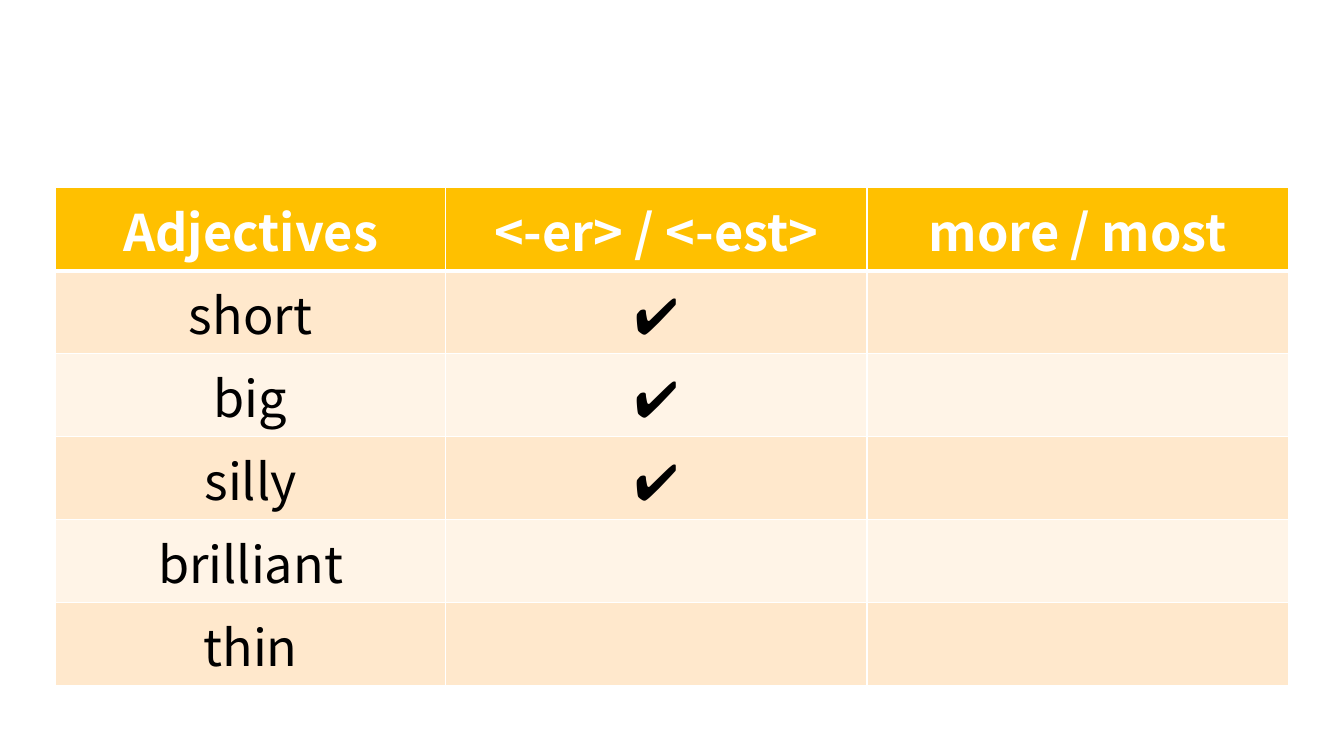
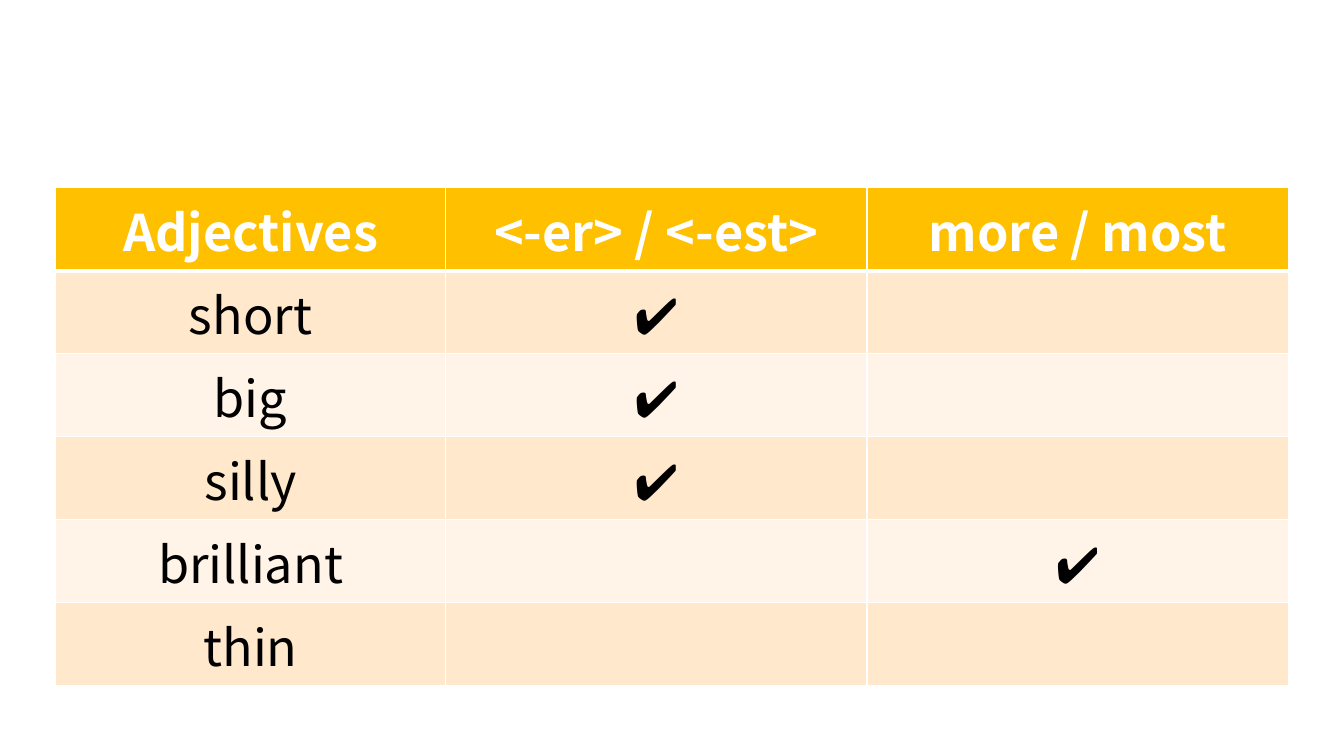
from lxml import etree
from pptx import Presentation
from pptx.dml.color import RGBColor
from pptx.enum import text
from pptx.oxml import ns
from pptx.util import Cm, Pt

FONT = "Noto Sans CJK JP"
FONT_SIZE = Pt(36)
WHITE = RGBColor(0xFF, 0xFF, 0xFF)
BLACK = RGBColor(0x00, 0x00, 0x00)
HEADER_FILL = RGBColor(0xFF, 0xC0, 0x00)
BAND_FILLS = (RGBColor(0xFF, 0xE8, 0xCC), RGBColor(0xFF, 0xF4, 0xE7))
THIN, THICK = Pt(1), Pt(3)

TABLE_LEFT, TABLE_TOP = Cm(1.4), Cm(4.73)
COLUMN_WIDTHS = (Cm(9.83), Cm(10.62), Cm(10.62))
ROW_HEIGHT = Cm(2.09)

HEADINGS = ("Adjectives", "<-er> / <-est>", "more / most")
ADJECTIVES = ("short", "big", "silly", "brilliant", "thin")
CHECK = "✔"
SUFFIX_COLUMN, MORE_COLUMN = 1, 2
FIRST_ANSWERS = {"short": SUFFIX_COLUMN, "big": SUFFIX_COLUMN, "silly": SUFFIX_COLUMN}
SLIDE_ANSWERS = (FIRST_ANSWERS, {**FIRST_ANSWERS, "brilliant": MORE_COLUMN})


def set_borders(cell, top, bottom):
    """Draw white borders; they must precede the fill in the cell properties."""
    properties = cell._tc.get_or_add_tcPr()
    for side, width in (("L", THIN), ("R", THIN), ("T", top), ("B", bottom)):
        line = etree.SubElement(properties, ns.qn(f"a:ln{side}"), w=str(width))
        fill = etree.SubElement(line, ns.qn("a:solidFill"))
        etree.SubElement(fill, ns.qn("a:srgbClr"), val=str(WHITE))


def write_cell(cell, content, color, bold):
    paragraph = cell.text_frame.paragraphs[0]
    paragraph.alignment = text.PP_ALIGN.CENTER
    if content:
        run = paragraph.add_run()
        run.text = content
        run.font.name = FONT
        run.font.size = FONT_SIZE
        run.font.bold = bold
        run.font.color.rgb = color


def answer_rows(answers):
    """Return one row per adjective, with a check in its answered column."""
    return [
        [adjective] + [CHECK if answers.get(adjective) == column else ""
                       for column in (SUFFIX_COLUMN, MORE_COLUMN)]
        for adjective in ADJECTIVES
    ]


def add_adjective_table(slide, left, top, answers):
    rows = [HEADINGS, *answer_rows(answers)]
    table = slide.shapes.add_table(
        len(rows), len(HEADINGS), left, top,
        sum(COLUMN_WIDTHS), ROW_HEIGHT * len(rows)).table
    for column, width in zip(table.columns, COLUMN_WIDTHS):
        column.width = width

    for row_index, row in enumerate(rows):
        is_header = row_index == 0
        table.rows[row_index].height = ROW_HEIGHT
        for column_index, content in enumerate(row):
            cell = table.cell(row_index, column_index)
            set_borders(cell,
                        top=THICK if row_index == 1 else THIN,
                        bottom=THICK if is_header else THIN)
            cell.fill.solid()
            cell.fill.fore_color.rgb = (
                HEADER_FILL if is_header else BAND_FILLS[(row_index - 1) % 2])
            write_cell(cell, content, WHITE if is_header else BLACK, is_header)


def main():
    presentation = Presentation()
    presentation.slide_width = Cm(33.87)
    presentation.slide_height = Cm(19.05)
    blank_layout = presentation.slide_layouts[6]
    for answers in SLIDE_ANSWERS:
        slide = presentation.slides.add_slide(blank_layout)
        add_adjective_table(slide, TABLE_LEFT, TABLE_TOP, answers)
    presentation.save("out.pptx")


if __name__ == "__main__":
    main()
